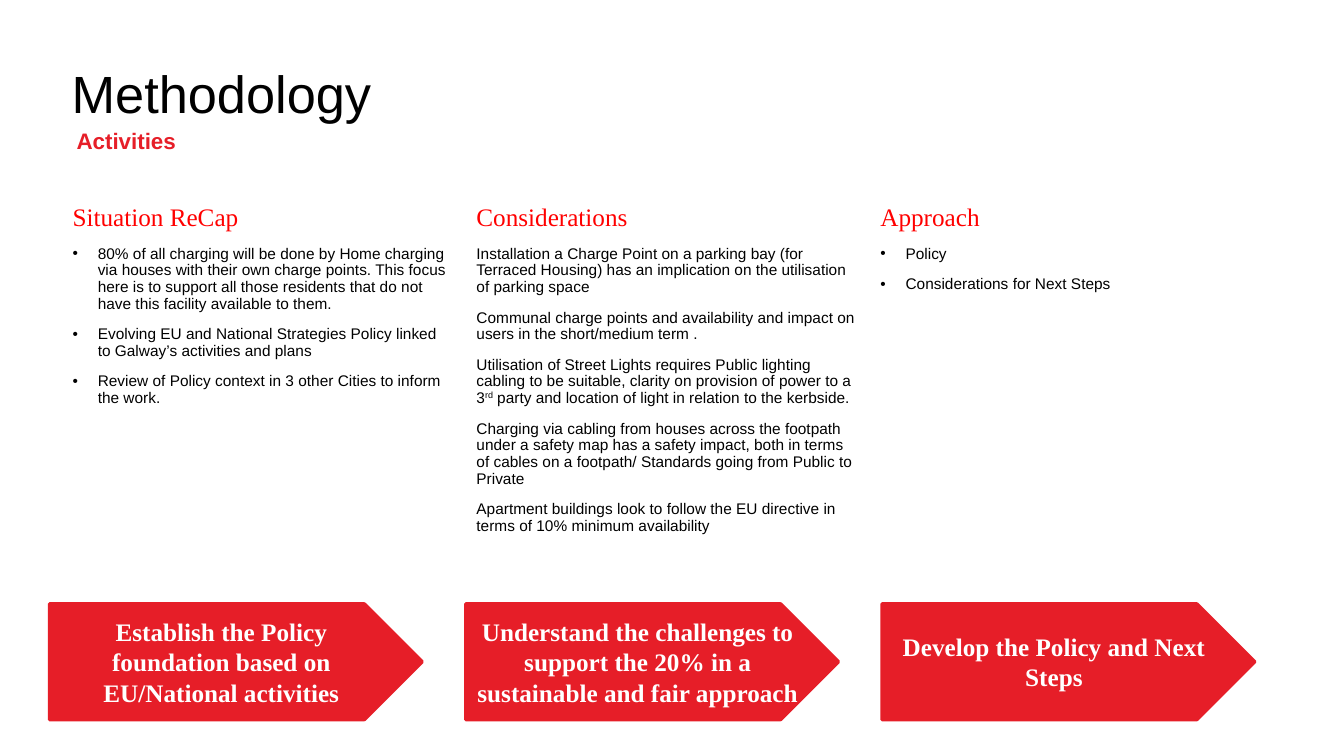
from lxml import etree
from pptx import Presentation
from pptx.dml.color import RGBColor
from pptx.enum import shapes, text
from pptx.oxml import ns
from pptx.util import Pt

RED = RGBColor(0xE6, 0x1E, 0x28)
HEADING_RED = RGBColor(0xFF, 0x00, 0x00)
BLACK = RGBColor(0x00, 0x00, 0x00)
WHITE = RGBColor(0xFF, 0xFF, 0xFF)
SANS = "Arial"
SERIF = "Times New Roman"

COLUMN_LEFT, COLUMN_TOP, COLUMN_STEP = 51.84, 146.16, 288.5
COLUMN_WIDTH, COLUMN_HEIGHT = 271.2, 270
ARROW_LEFT, ARROW_TOP, ARROW_STEP = 35.28, 431.28, 297.36
ARROW_WIDTH, ARROW_HEIGHT = 266.4, 82.8
BULLET_INDENT = 18

# Heading, whether bulleted, paragraphs as lists of spans (odd ones superscript), outcome
COLUMNS = [
    ("Situation ReCap", True, [
        ["80% of all charging will be done by Home charging via houses with their own "
         "charge points. This focus here is to support all those residents that do not "
         "have this facility available to them."],
        ["Evolving EU and National Strategies Policy linked to Galway’s activities and plans"],
        ["Review of Policy context in 3 other Cities to inform the work."],
    ], "Establish the Policy foundation based on EU/National activities"),
    ("Considerations", False, [
        ["Installation a Charge Point on a parking bay (for Terraced Housing) has an "
         "implication on the utilisation of parking space"],
        ["Communal charge points and availability and impact on users in the "
         "short/medium term ."],
        ["Utilisation of Street Lights requires Public lighting cabling to be suitable, "
         "clarity on provision of power to a 3", "rd",
         " party and location of light in relation to the kerbside."],
        ["Charging via cabling from houses across the footpath under a safety map has a "
         "safety impact, both in terms of cables on a footpath/ Standards going from "
         "Public to Private"],
        ["Apartment buildings look to follow the EU directive in terms of 10% minimum "
         "availability"],
    ], "Understand the challenges to support the 20% in a sustainable and fair approach"),
    ("Approach", True, [
        ["Policy"],
        ["Considerations for Next Steps"],
    ], "Develop the Policy and Next Steps"),
]


def write(para, content, size=11, font=SANS, color=BLACK, bold=False, superscript=False):
    span = para.add_run()
    span.text = content
    span.font.size = Pt(size)
    span.font.name = font
    span.font.bold = bold
    span.font.color.rgb = color
    if superscript:
        span._r.get_or_add_rPr().set("baseline", "30000")


def add_bullet(para):
    props = para._p.get_or_add_pPr()
    props.set("marL", str(Pt(BULLET_INDENT)))
    props.set("indent", str(-Pt(BULLET_INDENT)))
    etree.SubElement(props, ns.qn("a:buFont")).set("typeface", SANS)
    etree.SubElement(props, ns.qn("a:buChar")).set("char", "•")


def add_text_box(page, left, top, width, height):
    """Add a wrapping box without margins and return its text frame."""
    box = page.shapes.add_textbox(Pt(left), Pt(top), Pt(width), Pt(height))
    frame = box.text_frame
    frame.word_wrap = True
    frame.margin_left = frame.margin_right = frame.margin_top = frame.margin_bottom = 0
    frame.paragraphs[0].line_spacing = 0.9
    return frame


def add_title(page, content):
    title = page.shapes.title
    title.left, title.top, title.width, title.height = Pt(43.92), Pt(51.12), Pt(710.64), Pt(41.76)
    frame = title.text_frame
    frame.auto_size = text.MSO_AUTO_SIZE.NONE
    frame.vertical_anchor = text.MSO_ANCHOR.MIDDLE
    para = frame.paragraphs[0]
    para.alignment = text.PP_ALIGN.LEFT
    para.line_spacing = 0.7
    write(para, content, size=37.4)


def add_column(page, left, heading, bulleted, items):
    frame = add_text_box(page, left, COLUMN_TOP, COLUMN_WIDTH, COLUMN_HEIGHT)
    write(frame.paragraphs[0], heading, size=18, font=SERIF, color=HEADING_RED)
    for spans in items:
        para = frame.add_paragraph()
        if bulleted:
            add_bullet(para)
        para.line_spacing = 0.9
        para.space_before = Pt(10)
        for index, content in enumerate(spans):
            write(para, content, superscript=index % 2 == 1)


def add_arrow(page, left, outcome):
    arrow = page.shapes.add_shape(shapes.MSO_SHAPE.PENTAGON, Pt(left), Pt(ARROW_TOP),
                                  Pt(ARROW_WIDTH), Pt(ARROW_HEIGHT))
    arrow.shadow.inherit = False
    arrow.fill.solid()
    arrow.fill.fore_color.rgb = RED
    arrow.line.color.rgb = RED
    arrow.line.width = Pt(2.25)
    frame = arrow.text_frame
    frame.word_wrap = True
    frame.vertical_anchor = text.MSO_ANCHOR.MIDDLE
    para = frame.paragraphs[0]
    para.alignment = text.PP_ALIGN.CENTER
    write(para, outcome, size=18, font=SERIF, color=WHITE, bold=True)


def main():
    deck = Presentation()
    deck.slide_width, deck.slide_height = Pt(960), Pt(540)
    page = deck.slides.add_slide(deck.slide_layouts.get_by_name("Title Only"))
    add_title(page, "Methodology")
    subtitle = add_text_box(page, 54.72, 92.88, 800.64, 20)
    write(subtitle.paragraphs[0], "Activities", size=16, color=RED, bold=True)
    for index, (heading, bulleted, items, outcome) in enumerate(COLUMNS):
        add_column(page, COLUMN_LEFT + index * COLUMN_STEP, heading, bulleted, items)
        add_arrow(page, ARROW_LEFT + index * ARROW_STEP, outcome)
    deck.save("out.pptx")


if __name__ == "__main__":
    main()
